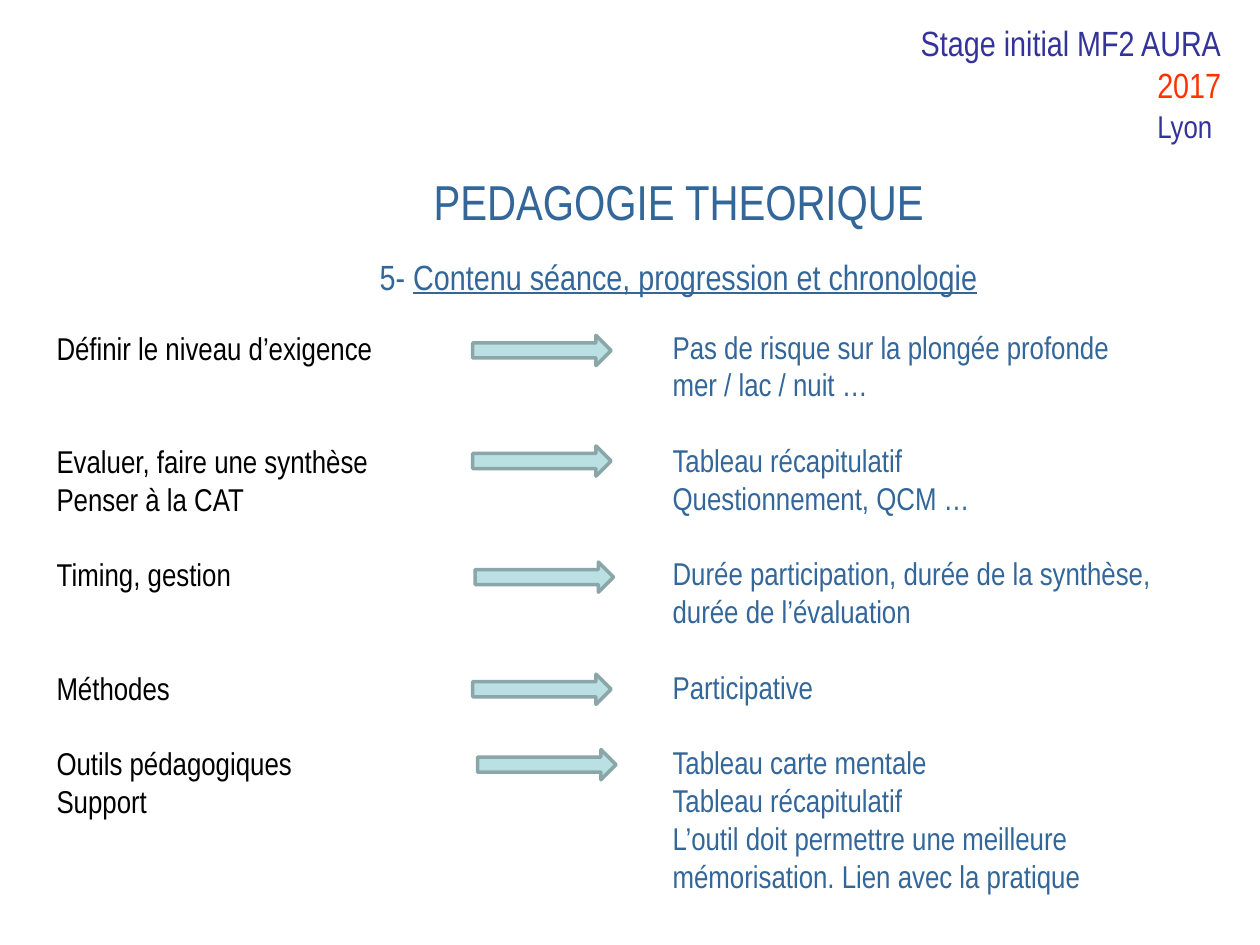
from pptx import Presentation
from pptx.dml.color import RGBColor
from pptx.enum.shapes import MSO_SHAPE
from pptx.enum.text import PP_ALIGN
from pptx.util import Cm, Pt

FONT = "Arial Narrow"
NAVY = RGBColor(0x33, 0x33, 0x99)
RED = RGBColor(0xFF, 0x33, 0x00)
BLUE = RGBColor(0x33, 0x66, 0x99)
BLACK = RGBColor(0, 0, 0)
AQUA = RGBColor(0xBB, 0xE0, 0xE3)
GREY = RGBColor(0x8A, 0xA6, 0xA8)
LINE_PITCH = 21.6

HEADER = ["Stage initial MF2 AURA", "2017"]
PLACE = ["Lyon"]
TITLE = "PEDAGOGIE THEORIQUE"
NUMBER, SUBTITLE = "5- ", "Contenu séance, progression et chronologie"
ROWS = [
    (["Définir le niveau d’exigence"],
     ["Pas de risque sur la plongée profonde", "mer / lac / nuit …"]),
    (["Evaluer, faire une synthèse", "Penser à la CAT"],
     ["Tableau récapitulatif", "Questionnement, QCM …"]),
    (["Timing, gestion"],
     ["Durée participation, durée de la synthèse,", "durée de l’évaluation"]),
    (["Méthodes"], ["Participative"]),
    (["Outils pédagogiques", "Support"],
     ["Tableau carte mentale", "Tableau récapitulatif",
      "L’outil doit permettre une meilleure\vmémorisation. Lien avec la pratique"]),
]
ARROWS = [(9.53, 6.76), (9.53, 8.99), (9.58, 11.33), (9.53, 13.59), (9.63, 15.11)]


def add_text(s, box, lines, size, color, align=PP_ALIGN.LEFT, wrap=True):
    tf = s.shapes.add_textbox(*map(Cm, box)).text_frame
    tf.word_wrap = wrap
    tf.text = "\n".join(lines)
    for p in tf.paragraphs:
        p.alignment = align
        for r in p.runs:
            r.font.name = FONT
            r.font.size = Pt(size)
            r.font.color.rgb = color
    return tf


def add_column(s, box, side, color):
    groups = [row[side] for row in ROWS]
    tf = add_text(s, box, [line for group in groups for line in group], 18, color)
    start = used = first = 0
    for row, group in zip(ROWS, groups):
        if first:
            tf.paragraphs[first].space_before = Pt(LINE_PITCH * (start - used))
        first += len(group)
        used = start + len(group)
        start += max(map(len, row)) + 1


prs = Presentation()
prs.slide_width, prs.slide_height = Cm(25.4), Cm(19.05)
s = prs.slides.add_slide(prs.slide_layouts[6])

tf = add_text(s, (17.91, 0.3, 6.96, 1.96), HEADER, 20, NAVY, PP_ALIGN.RIGHT, False)
tf.paragraphs[1].runs[0].font.color.rgb = RED
add_text(s, (22.99, 2.03, 1.7, 1.02), PLACE, 18, NAVY, PP_ALIGN.RIGHT, False)

tf = add_text(s, (6.48, 3.33, 14.4, 2.82), [TITLE, NUMBER], 28, BLUE, PP_ALIGN.CENTER)
p = tf.paragraphs[1]
p.space_before = Pt(14.4)
r = p.add_run()
r.text = SUBTITLE
r.font.underline = True
r.font.name = FONT
r.font.color.rgb = BLUE
for r in p.runs:
    r.font.size = Pt(20)

add_column(s, (0.89, 6.5, 9.8, 10.26), 0, BLACK)
for x, y in ARROWS:
    sp = s.shapes.add_shape(MSO_SHAPE.RIGHT_ARROW, Cm(x), Cm(y), Cm(2.79), Cm(0.61))
    sp.shadow.inherit = False
    sp.fill.solid()
    sp.fill.fore_color.rgb = AQUA
    sp.line.color.rgb = GREY
    sp.line.width = Pt(2)
add_column(s, (13.31, 6.48, 11.99, 11.79), 1, BLUE)

prs.save("out.pptx")
